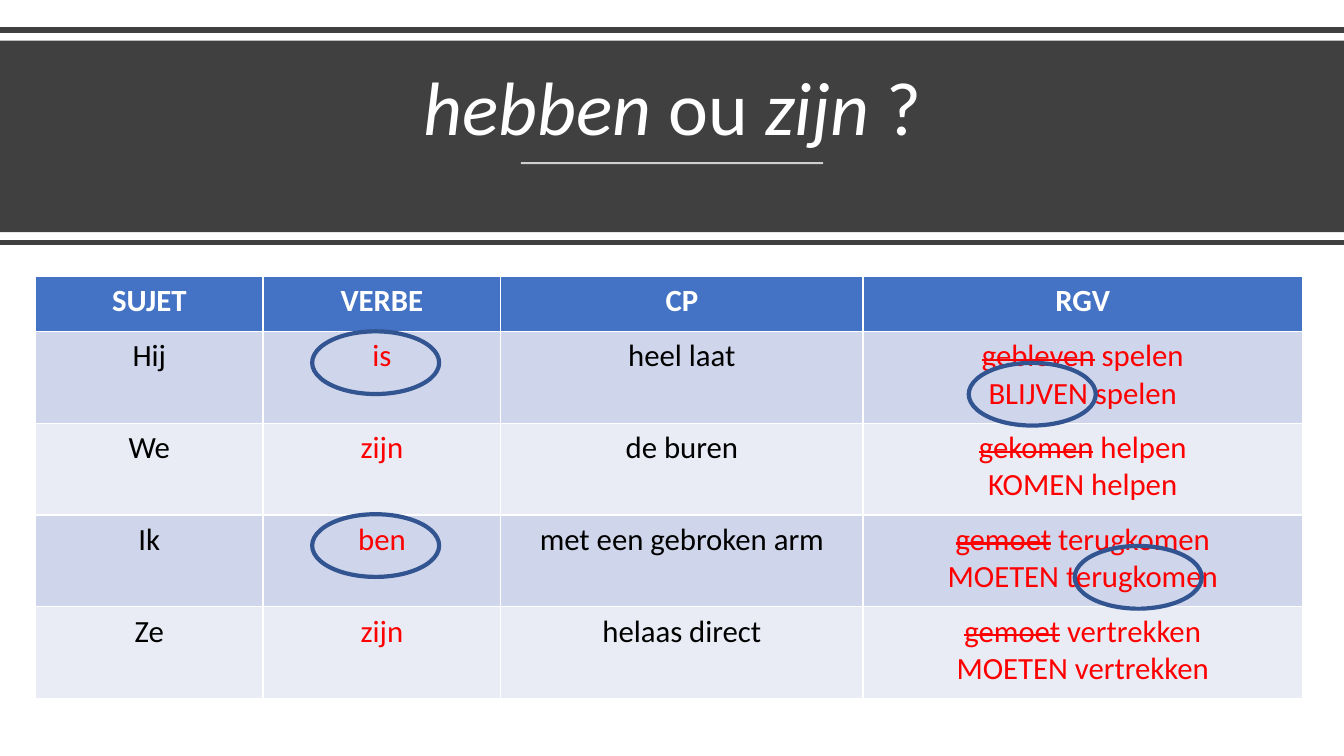
from pptx import Presentation
from pptx import util as u
from pptx.dml.color import RGBColor
from pptx.enum import shapes, text
from pptx.oxml import ns
from lxml import etree

COLORS = {
    "dark": "404040", "white": "FFFFFF", "black": "000000", "red": "FF0000",
    "header": "4472C4", "odd": "CFD5EA", "even": "E9EBF5", "oval": "325491",
}


def add_run(paragraph, wording, color, strike=False, **formats):
    run = paragraph.add_run()
    run.text = wording
    for name, value in formats.items():
        setattr(run.font, name, value)
    run.font.name = "Calibri"
    run.font.color.rgb = RGBColor.from_string(COLORS[color])
    if strike:
        run._r.get_or_add_rPr().set("strike", "sngStrike")


def add_rule(slide, left, right, y, color, width):
    rule = slide.shapes.add_connector(
        shapes.MSO_CONNECTOR.STRAIGHT, u.Pt(left), u.Pt(y), u.Pt(right), u.Pt(y))
    rule.line.color.rgb = RGBColor.from_string(COLORS[color])
    rule.line.width = u.Pt(width)
    etree.SubElement(rule._element.spPr, ns.qn("a:effectLst"))
    return rule


presentation = Presentation()
presentation.slide_width = u.Pt(960)
presentation.slide_height = u.Pt(540)
slide = presentation.slides.add_slide(presentation.slide_layouts[6])

add_rule(slide, 0, 960, 21.5, "dark", 4)
band = slide.shapes.add_shape(
    shapes.MSO_SHAPE.RECTANGLE, u.Pt(0), u.Pt(29), u.Pt(960), u.Pt(136.8))
band.shadow.inherit = False
band.fill.solid()
band.fill.fore_color.rgb = RGBColor.from_string(COLORS["dark"])
band.line.fill.background()

title = slide.shapes.add_textbox(u.Pt(41.8), u.Pt(38.9), u.Pt(877), u.Pt(73.4))
title_format = {"word_wrap": True, "vertical_anchor": text.MSO_ANCHOR.BOTTOM}
for name, value in title_format.items():
    setattr(title.text_frame, name, value)
paragraph = title.text_frame.paragraphs[0]
paragraph.alignment = text.PP_ALIGN.CENTER
paragraph.line_spacing = 0.9
for wording, italic in [("hebben ", True), ("ou ", False), ("zijn", True), (" ?", False)]:
    add_run(paragraph, wording, "white", size=u.Pt(54), italic=italic)

underline = add_rule(slide, 372, 588, 116.5, "white", 1.5)
line_color = underline._element.spPr.find(".//" + ns.qn("a:srgbClr"))
etree.SubElement(line_color, ns.qn("a:alpha")).set("val", "75000")
add_rule(slide, 0, 960, 173.3, "dark", 4)

headings = ["SUJET", "VERBE", "CP", "RGV"]
sentences = [
    ("Hij", "is", "heel laat", "gebleven", "BLIJVEN", "spelen"),
    ("We", "zijn", "de buren", "gekomen", "KOMEN", "helpen"),
    ("Ik", "ben", "met een gebroken arm", "gemoet", "MOETEN", "terugkomen"),
    ("Ze", "zijn", "helaas direct", "gemoet", "MOETEN", "vertrekken"),
]
rows = [[[[(heading, "white", False)]] for heading in headings]]
for subject, verb, complement, wrong, right, infinitive in sentences:
    rows.append([
        [[(subject, "black", False)]],
        [[(verb, "red", False)]],
        [[(complement, "black", False)]],
        [[(wrong, "red", True), (f" {infinitive}", "red", False)],
         [(f"{right} {infinitive}", "red", False)]],
    ])

table = slide.shapes.add_table(
    len(rows), len(headings), u.Pt(25.4), u.Pt(197.5), u.Pt(905), u.Pt(302)).table
for column, width in zip(table.columns, [162.5, 169.8, 258.8, 313.9]):
    column.width = u.Pt(width)
cell_format = {
    "margin_left": u.Pt(8.6), "margin_right": u.Pt(8.6),
    "margin_top": u.Pt(4.3), "margin_bottom": u.Pt(4.3),
}
for row_index, row in enumerate(rows):
    is_header = row_index == 0
    table.rows[row_index].height = u.Pt(39.2 if is_header else 65.6)
    fill = "header" if is_header else ("odd" if row_index % 2 else "even")
    for column_index, lines in enumerate(row):
        cell = table.cell(row_index, column_index)
        for name, value in cell_format.items():
            setattr(cell, name, value)
        cell.fill.solid()
        cell.fill.fore_color.rgb = RGBColor.from_string(COLORS[fill])
        frame = cell.text_frame
        for line_index, runs in enumerate(lines):
            paragraph = frame.add_paragraph() if line_index else frame.paragraphs[0]
            paragraph.alignment = text.PP_ALIGN.CENTER
            for wording, color, strike in runs:
                add_run(paragraph, wording, color, strike, size=u.Pt(22), bold=is_header)

for left, top in [(692, 259.2), (223, 236.7), (767.7, 390), (223, 367.3)]:
    oval = slide.shapes.add_shape(
        shapes.MSO_SHAPE.OVAL, u.Pt(left), u.Pt(top), u.Pt(90.7), u.Pt(44.8))
    oval.shadow.inherit = False
    oval.fill.background()
    oval.line.color.rgb = RGBColor.from_string(COLORS["oval"])
    oval.line.width = u.Pt(3)

presentation.save("out.pptx")
